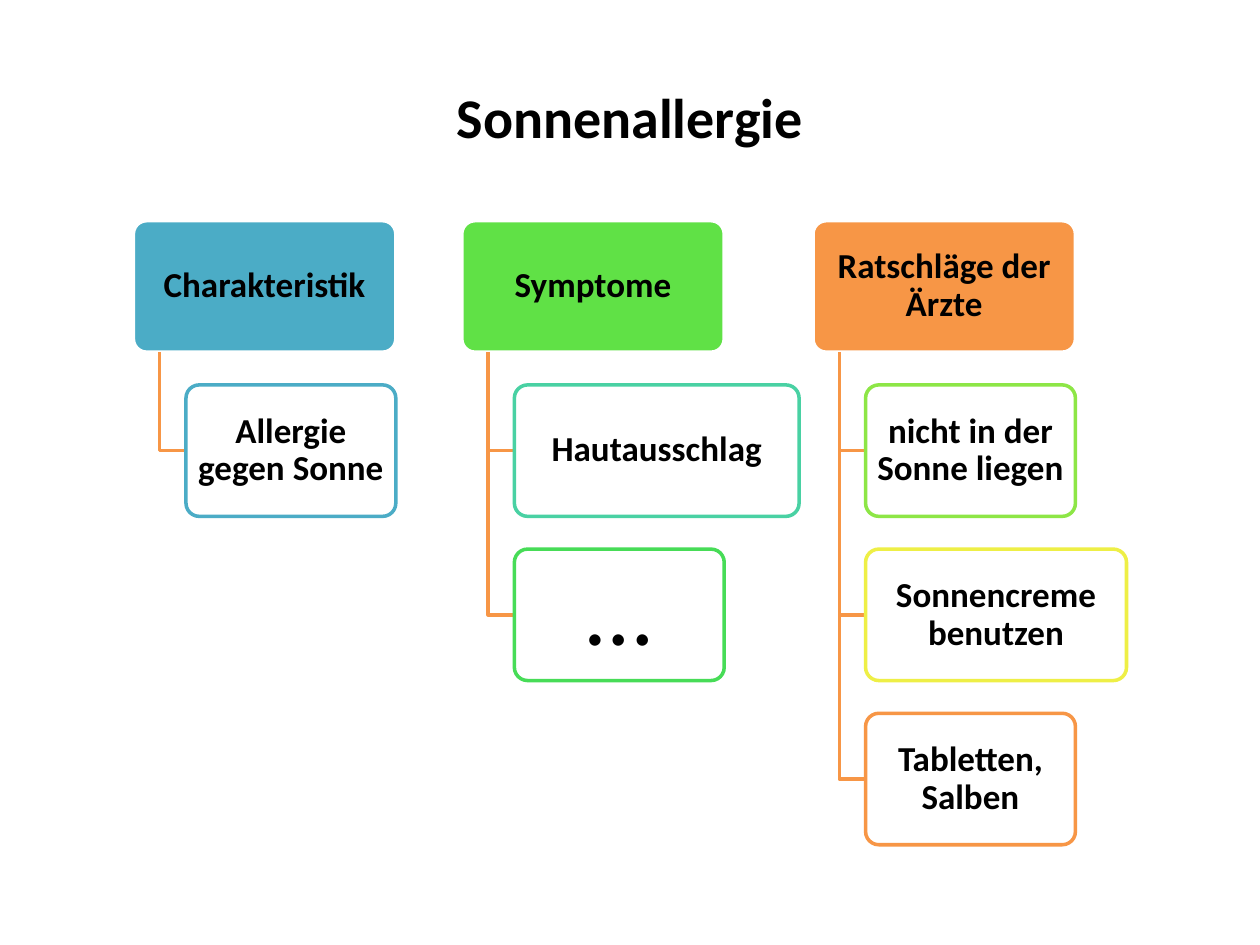
from pptx import Presentation
from pptx import util as u
from pptx.dml.color import RGBColor
from pptx.enum import shapes, text
from pptx.oxml.ns import qn
from lxml import etree

# Content: heading, fill, left edge, items as (text, line colour, width, format)
TITLE = "Sonnenallergie"
HUE = {
    "black": "000000", "white": "FFFFFF", "blue": "4BACC6",
    "green": "60E146", "orange": "F79646", "teal": "49D1A3",
    "leaf": "47DC57", "lime": "8DE646", "yellow": "EEEF46",
}
SLIM = 4.23
DOTS = {"size": 54, "bold": False, "pad": (0.28, 0.18)}
GROUPS = [
    ("Charakteristik", "blue", 2.69, [
        ("Allergie gegen Sonne", "blue", SLIM, {}),
    ]),
    ("Symptome", "green", 9.31, [
        ("Hautausschlag", "teal", 5.74, {}),
        ("…", "leaf", SLIM, DOTS),
    ]),
    ("Ratschläge der Ärzte", "orange", 16.39, [
        ("nicht in der Sonne liegen", "lime", SLIM, {}),
        ("Sonnencreme benutzen", "yellow", 5.26, {}),
        ("Tabletten, Salben", "orange", SLIM, {}),
    ]),
]

# Grid in centimetres
TOP, HEAD, HIGH, STEP = 4.45, 5.29, 2.65, 3.31
STEM, INDENT = 0.53, 1.06


def rgb(name):
    return RGBColor.from_string(HUE[name])


def write(shape, words, size=20, bold=True, pad=(0.1, 0.07), space=0.9):
    frame = shape.text_frame
    frame.word_wrap = True
    frame.vertical_anchor = text.MSO_ANCHOR.MIDDLE
    frame.margin_left = frame.margin_right = u.Cm(pad[0])
    frame.margin_top = frame.margin_bottom = u.Cm(pad[1])
    para = frame.paragraphs[0]
    para.alignment = text.PP_ALIGN.CENTER
    para.line_spacing = space
    run = para.add_run()
    run.text = words
    font = run.font
    font.name, font.size, font.bold = "Calibri", u.Pt(size), bold
    font.color.rgb = rgb("black")


def outline(shape, name):
    shape.shadow.inherit = False
    shape.line.color.rgb = rgb(name)
    shape.line.width = u.Pt(2)


def box(slide, x, y, wide, fill, line):
    shape = slide.shapes.add_shape(
        shapes.MSO_SHAPE.ROUNDED_RECTANGLE,
        u.Cm(x), u.Cm(y), u.Cm(wide), u.Cm(HIGH))
    shape.adjustments[0] = 0.1
    shape.fill.solid()
    shape.fill.fore_color.rgb = rgb(fill)
    outline(shape, line)
    return shape


def fade(shape):
    tint = shape.fill._xPr.find(qn("a:solidFill"))[0]
    etree.SubElement(tint, qn("a:alpha"), val="90000")


def branch(slide, x, y):
    """Elbow from the foot of a heading to the middle of an item."""
    path = slide.shapes.build_freeform(u.Cm(x + STEM), u.Cm(TOP + HIGH))
    path.add_line_segments([
        (u.Cm(x + STEM), u.Cm(y + HIGH / 2)),
        (u.Cm(x + INDENT), u.Cm(y + HIGH / 2)),
    ], close=False)
    shape = path.convert_to_shape()
    shape.fill.background()
    outline(shape, "orange")


def main():
    deck = Presentation()
    deck.slide_width, deck.slide_height = u.Cm(25.4), u.Cm(19.05)
    slide = deck.slides.add_slide(deck.slide_layouts[5])

    # Title
    title = slide.shapes.title
    title.left, title.top = u.Cm(1.27), u.Cm(0.76)
    title.width, title.height = u.Cm(22.86), u.Cm(3.18)
    write(title, TITLE, size=32, pad=(0.25, 0.13), space=1.0)

    # Headings with their items below
    for head, fill, x, items in GROUPS:
        write(box(slide, x, TOP, HEAD, fill, "white"), head)
        for row, (words, line, wide, form) in enumerate(items, 1):
            y = TOP + row * STEP
            branch(slide, x, y)
            item = box(slide, x + INDENT, y, wide, "white", line)
            fade(item)
            write(item, words, **form)

    deck.save("out.pptx")


if __name__ == "__main__":
    main()
